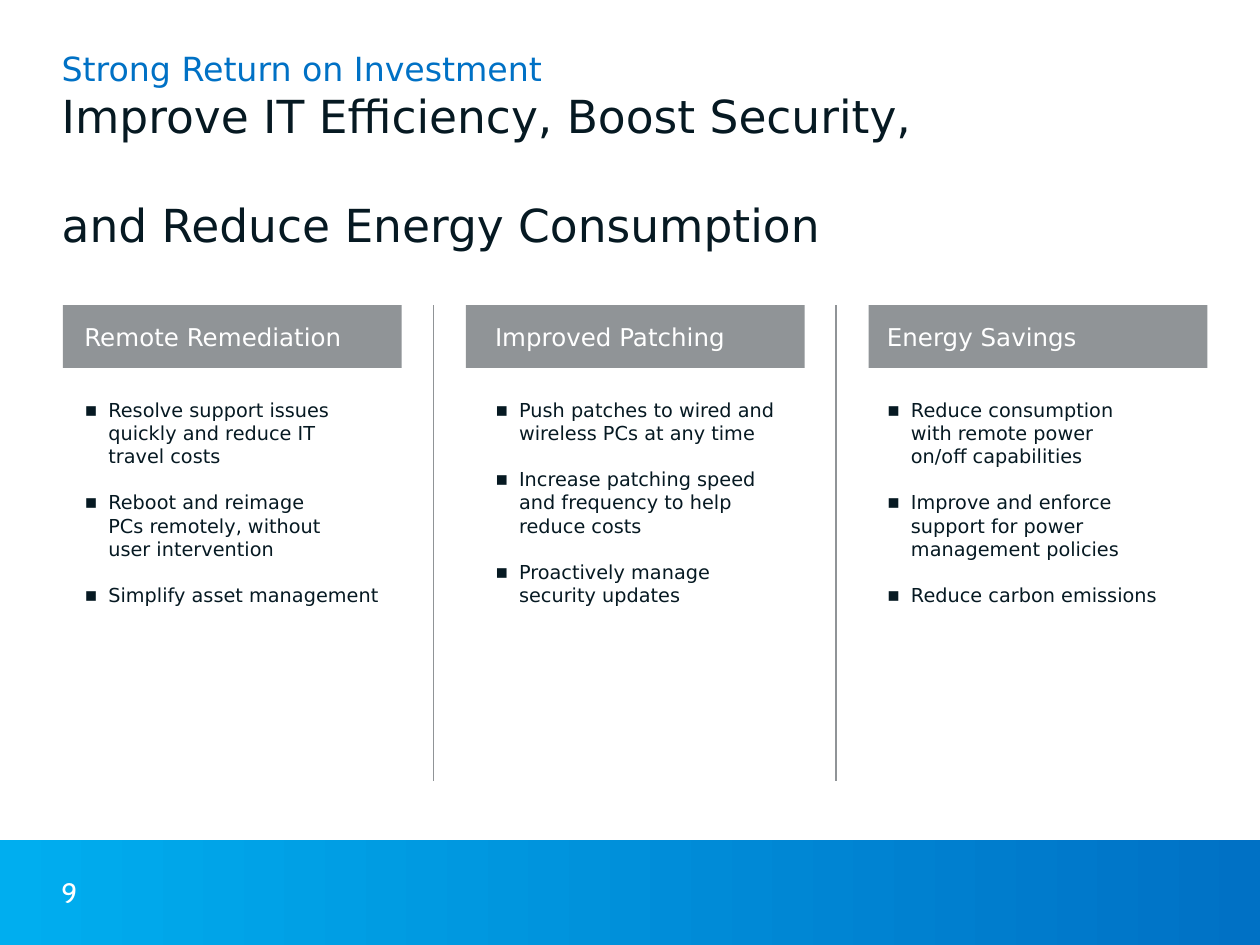
from lxml import etree
from pptx import Presentation
from pptx.dml.color import RGBColor
from pptx.enum.shapes import MSO_CONNECTOR, MSO_SHAPE
from pptx.enum.text import MSO_ANCHOR, MSO_AUTO_SIZE, PP_ALIGN
from pptx.oxml.ns import qn
from pptx.util import Cm, Pt

RECT = MSO_SHAPE.RECTANGLE
STRAIGHT = MSO_CONNECTOR.STRAIGHT
TOP, MIDDLE = MSO_ANCHOR.TOP, MSO_ANCHOR.MIDDLE
LEFT = PP_ALIGN.LEFT
NO_FIT = MSO_AUTO_SIZE.NONE

BLUE, CYAN, INK, GRAY, WHITE = "0071C5", "00AEEF", "061922", "909497", "FFFFFF"

TITLE = [
    ("Strong Return on Investment", 19, BLUE, 0),
    ("Improve IT Efficiency, Boost Security,", 26, INK, 0),
    ("and Reduce Energy Consumption", 26, INK, 31),
]
COLUMNS = [
    ("Remote Remediation", 1.45, [
        "Resolve support issues quickly and reduce IT\ntravel costs",
        "Reboot and reimage\nPCs remotely, without\nuser intervention",
        "Simplify asset management",
    ]),
    ("Improved Patching", 9.73, [
        "Push patches to wired and wireless PCs at any time",
        "Increase patching speed\nand frequency to help reduce costs",
        "Proactively manage\nsecurity updates",
    ]),
    ("Energy Savings", 17.63, [
        "Reduce consumption\nwith remote power\non/off capabilities",
        "Improve and enforce support for power management policies",
        "Reduce carbon emissions",
    ]),
]
COLUMN_LEFT, COLUMN_PITCH, COLUMN_WIDTH = 1.27, 8.12, 6.83
COLUMN_TOP, COLUMN_BOTTOM = 6.15, 15.75
DIVIDER_OFFSET = 7.47


def rgb(value):
    return RGBColor.from_string(value)


class Deck:
    font = "DejaVu Sans"

    def __init__(self, slide):
        self.slide = slide

    def place(self, sp, x, y, w, h):
        sp.left, sp.top, sp.width, sp.height = Cm(x), Cm(y), Cm(w), Cm(h)

    def frame(self, sp, anchor):
        tf = sp.text_frame
        tf.word_wrap = True
        tf.auto_size = NO_FIT
        tf.vertical_anchor = anchor
        return tf

    def paragraph(self, tf, index, text, size, color, before=0, font=None):
        p = tf.paragraphs[0] if index == 0 else tf.add_paragraph()
        p.alignment = LEFT
        p.line_spacing = 1.0
        p.space_before, p.space_after = Pt(before), Pt(0)
        for i, line in enumerate(text.split("\n")):
            if i:
                p.add_line_break()
            r = p.add_run()
            r.text = line
            r.font.name = font or self.font
            r.font.size = Pt(size)
            r.font.bold = False
            r.font.color.rgb = rgb(color)
        return p

    def title(self, lines, *box):
        sp = self.slide.shapes.title
        self.place(sp, *box)
        tf = self.frame(sp, TOP)
        for i, (text, size, color, before) in enumerate(lines):
            self.paragraph(tf, i, text, size, color, before)

    def bullets(self, sp, items, *box):
        self.place(sp, *box)
        tf = self.frame(sp, TOP)
        for i, item in enumerate(items):
            p = self.paragraph(tf, i, item, 11, INK, 13.2 if i else 0)
            pPr = p._p.get_or_add_pPr()
            pPr.set("marL", str(Cm(0.48)))
            pPr.set("indent", str(-Cm(0.48)))
            etree.SubElement(pPr, qn("a:buFont")).set("typeface", self.font)
            etree.SubElement(pPr, qn("a:buChar")).set("char", "▪")

    def text(self, text, size, color, *box, font=None):
        sp = self.slide.shapes.add_textbox(*map(Cm, box))
        self.paragraph(self.frame(sp, MIDDLE), 0, text, size, color, font=font)

    def bar(self, colors, *box):
        sp = self.slide.shapes.add_shape(RECT, *map(Cm, box))
        sp.shadow.inherit = False
        sp.line.fill.background()
        if len(colors) == 1:
            sp.fill.solid()
            sp.fill.fore_color.rgb = rgb(colors[0])
            return
        sp.fill.gradient()
        sp.fill.gradient_angle = 0
        for stop, color in zip(sp.fill.gradient_stops, colors):
            stop.color.rgb = rgb(color)

    def divider(self, x, top, bottom):
        line = self.slide.shapes.add_connector(
            STRAIGHT, Cm(x), Cm(top), Cm(x), Cm(bottom))
        line.line.color.rgb = rgb(GRAY)
        line.line.width = Pt(1)
        etree.SubElement(line._element.spPr, qn("a:effectLst"))


def main():
    prs = Presentation()
    prs.slide_width, prs.slide_height = Cm(25.4), Cm(19.05)
    s = prs.slides.add_slide(prs.slide_layouts.get_by_name("Comparison"))
    deck = Deck(s)
    deck.title(TITLE, 0.99, 0.84, 17.86, 4.65)
    *bodies, spare = list(s.placeholders)[1:]
    spare._element.getparent().remove(spare._element)

    deck.bar([CYAN, BLUE], 0, 16.93, 25.4, 2.12)
    deck.text("9", 16, WHITE, 0.99, 17.73, 1.19, 0.53, font="Cabin")

    for i, (heading, text_left, items) in enumerate(COLUMNS):
        x = COLUMN_LEFT + i * COLUMN_PITCH
        deck.bar([GRAY], x, COLUMN_TOP, COLUMN_WIDTH, 1.27)
        deck.text(heading, 14, WHITE, text_left, 6.35, 6.48, 0.86)
        deck.bullets(bodies[i], items, text_left, 7.9, 6.65, 4.5)
        if i < len(COLUMNS) - 1:
            deck.divider(x + DIVIDER_OFFSET, COLUMN_TOP, COLUMN_BOTTOM)

    prs.save("out.pptx")


if __name__ == "__main__":
    main()
